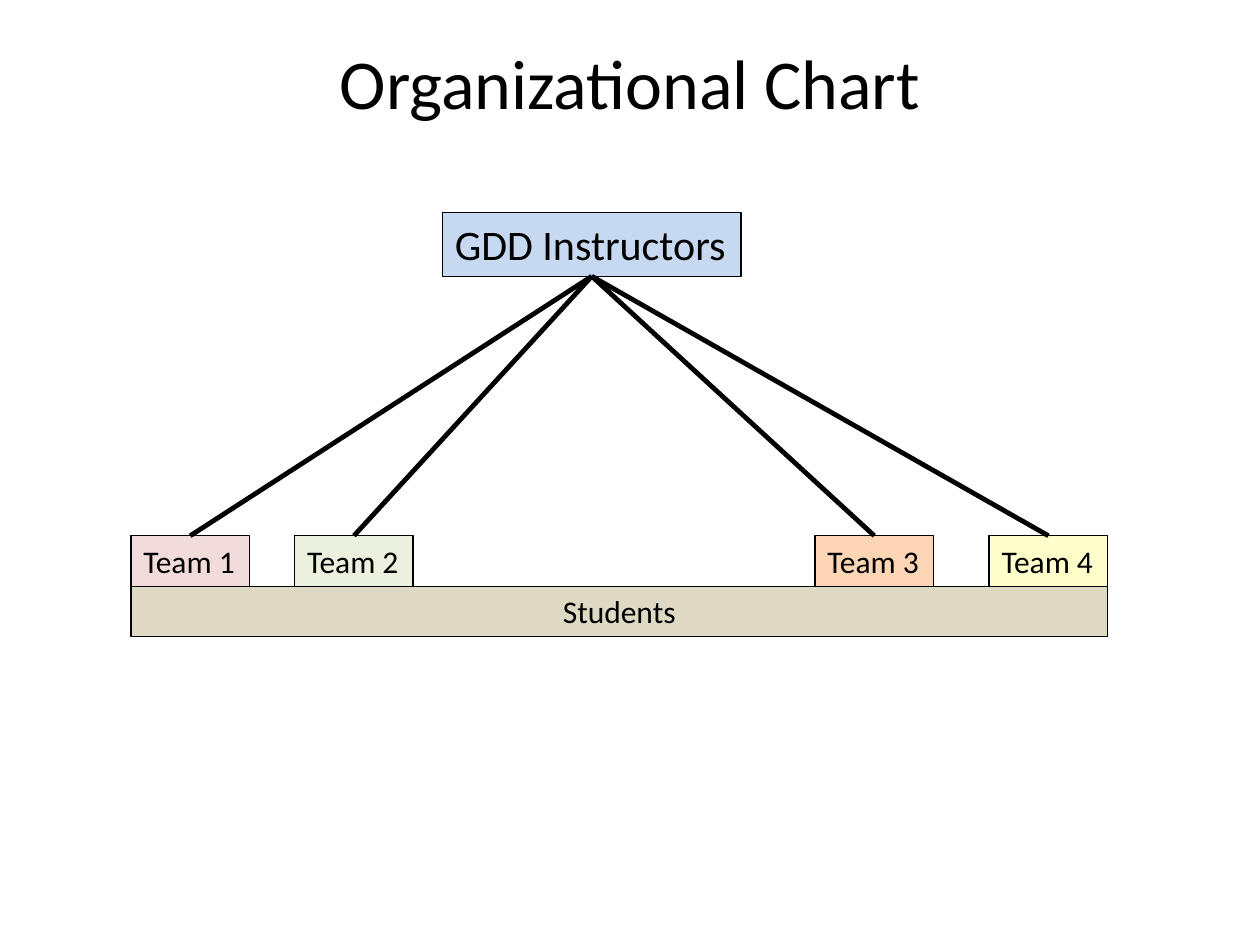
"""Build an organizational chart linking instructors, teams and students."""
import pptx
import pptx.dml.color
import pptx.enum.shapes
import pptx.enum.text
import pptx.oxml
import pptx.oxml.ns
import pptx.util

Cm = pptx.util.Cm
Pt = pptx.util.Pt
ALIGN = pptx.enum.text.PP_ALIGN
ANCHOR = pptx.enum.text.MSO_ANCHOR
FIT = pptx.enum.text.MSO_AUTO_SIZE

BLACK = "000000"
TEAM_TOP, TEAM_WIDTH, ROW_HEIGHT = 10.8, 2.39, 1.02
TEAMS = [
    ("Team 1", 2.64, "F2DCDB"),
    ("Team 2", 5.94, "EBF1DE"),
    ("Team 3", 16.43, "FCD5B5"),
    ("Team 4", 19.94, "FFFFCC"),
]


def color(value):
    return pptx.dml.color.RGBColor.from_string(value)


def write(frame, text, size=18, align=ALIGN.LEFT, anchor=ANCHOR.TOP, wrap=False, fit=FIT.SHAPE_TO_FIT_TEXT):
    frame.word_wrap = wrap
    frame.auto_size = fit
    frame.vertical_anchor = anchor
    paragraph = frame.paragraphs[0]
    paragraph.alignment = align
    run = paragraph.add_run()
    run.text = text
    run.font.name = "Calibri"
    run.font.size = Pt(size)
    run.font.color.rgb = color(BLACK)


def add_title(slide, text):
    title = slide.shapes.add_textbox(Cm(1.27), Cm(0.76), Cm(22.86), Cm(1.78))
    write(title.text_frame, text, size=40, align=ALIGN.CENTER, anchor=ANCHOR.MIDDLE, wrap=True, fit=FIT.NONE)


def add_box(slide, text, left, top, width, height, fill, **text_format):
    box = slide.shapes.add_shape(
        pptx.enum.shapes.MSO_SHAPE.RECTANGLE, Cm(left), Cm(top), Cm(width), Cm(height)
    )
    box.shadow.inherit = False
    box.fill.solid()
    box.fill.fore_color.rgb = color(fill)
    box.line.color.rgb = color(BLACK)
    box.line.width = Pt(0.75)
    write(box.text_frame, text, **text_format)
    return box


def add_link(slide, parent, child):
    link = slide.shapes.add_connector(
        pptx.enum.shapes.MSO_CONNECTOR.STRAIGHT,
        parent.left + parent.width // 2,
        parent.top + parent.height,
        child.left + child.width // 2,
        child.top,
    )
    link.line.color.rgb = color(BLACK)
    link.line.width = Pt(2.75)
    properties = link.element.find(pptx.oxml.ns.qn("p:spPr"))
    properties.append(pptx.oxml.parse_xml(f"<a:effectLst {pptx.oxml.ns.nsdecls('a')}/>"))


def main():
    deck = pptx.Presentation()
    deck.slide_width, deck.slide_height = Cm(25.4), Cm(19.05)
    slide = deck.slides.add_slide(deck.slide_layouts[6])

    add_title(slide, "Organizational Chart")
    instructors = add_box(slide, "GDD Instructors", 8.92, 4.29, 6.02, 1.28, "C6D9F1", size=24)
    teams = [
        add_box(slide, name, left, TEAM_TOP, TEAM_WIDTH, ROW_HEIGHT, fill)
        for name, left, fill in TEAMS
    ]
    for team in reversed(teams):
        add_link(slide, instructors, team)

    first_left, last_left = TEAMS[0][1], TEAMS[-1][1]
    add_box(
        slide, "Students", first_left, TEAM_TOP + ROW_HEIGHT,
        last_left + TEAM_WIDTH - first_left, ROW_HEIGHT, "DDD9C3",
        align=ALIGN.CENTER, wrap=True,
    )
    deck.save("out.pptx")


if __name__ == "__main__":
    main()
